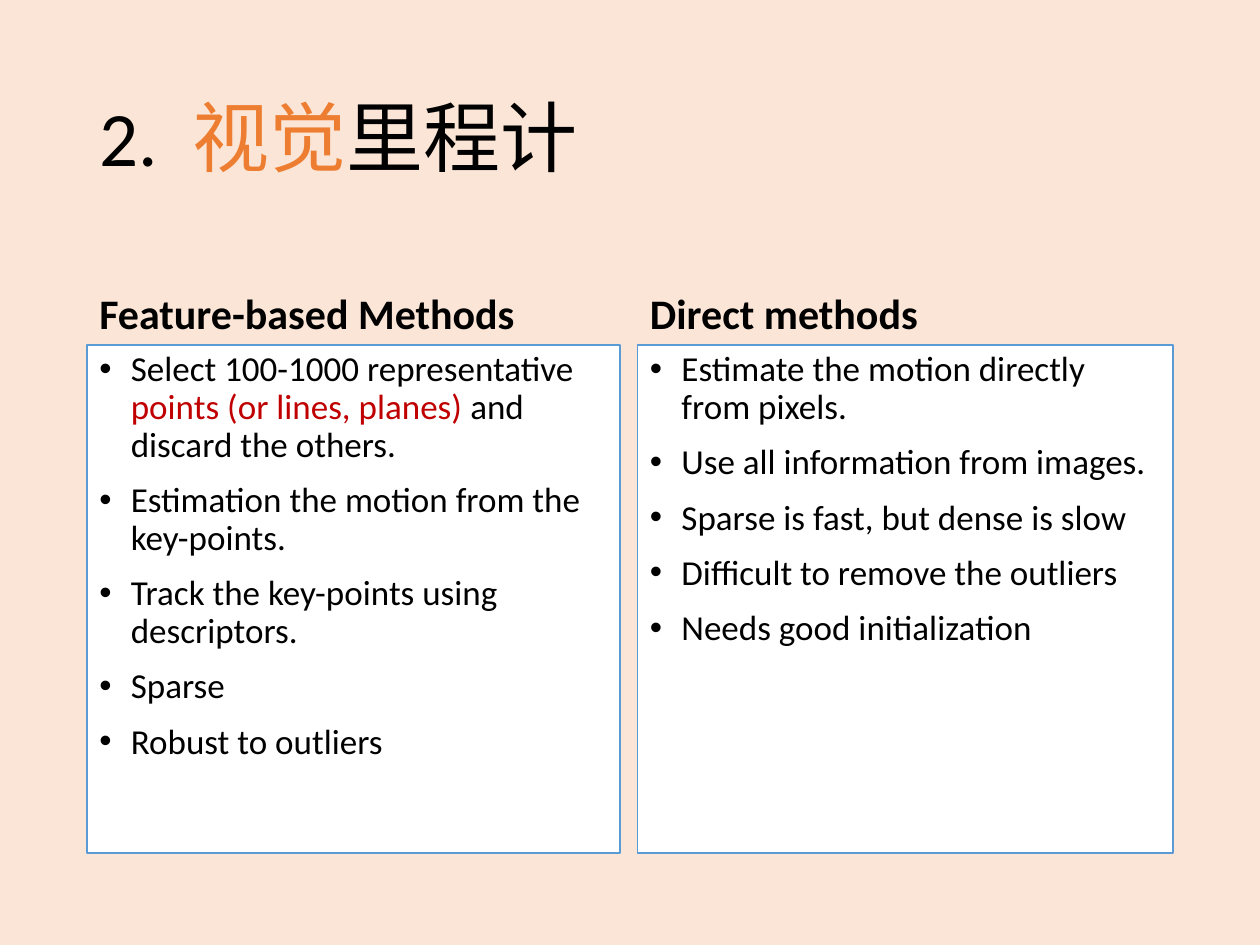
from dataclasses import dataclass

from lxml import etree
from pptx import Presentation
from pptx import util as u
from pptx.dml.color import RGBColor
from pptx.enum import shapes, text
from pptx.oxml import ns

SCALE = 9144  # EMU per px, 100 px to the inch


def px(n):
    return u.Emu(n * SCALE)


@dataclass(frozen=True)
class Theme:
    font: str = "Calibri"
    back: str = "FBE5D6"
    ink: str = "000000"
    hot: str = "ED7D31"
    red: str = "C00000"
    fill: str = "FFFFFF"
    edge: str = "5B9BD5"
    title: int = 44
    head: int = 24
    body: int = 20
    track: int = 990  # widens the space after the title number, 1/100 pt


class Deck:
    def __init__(self, theme):
        self.theme = theme
        self.prs = Presentation()
        self.prs.slide_width, self.prs.slide_height = px(1000), px(750)
        self.slide = self.prs.slides.add_slide(self.prs.slide_layouts[6])
        self.paint(self.slide.background.fill, theme.back)

    def paint(self, fill, tone):
        fill.solid()
        fill.fore_color.rgb = RGBColor.from_string(tone)

    def typeset(self, shape, paras, size, anchor, bold=False, dots=False):
        """Each paragraph is a list of (words, colour, tracking) runs."""
        frame = shape.text_frame
        frame.word_wrap = True
        frame.vertical_anchor = anchor
        for i, runs in enumerate(paras):
            para = frame.paragraphs[0] if i == 0 else frame.add_paragraph()
            if dots:
                self.dot(para)
            form = {"alignment": text.PP_ALIGN.LEFT, "line_spacing": 0.9,
                    "space_before": u.Pt(10 if i else 0)}
            for key, val in form.items():
                setattr(para, key, val)
            for words, tone, track in runs:
                run = para.add_run()
                run.text = words
                face = {"name": self.theme.font, "size": u.Pt(size), "bold": bold}
                for key, val in face.items():
                    setattr(run.font, key, val)
                run.font.color.rgb = RGBColor.from_string(tone)
                if track:
                    run._r.get_or_add_rPr().set("spc", str(track))

    def dot(self, para):
        """Give the paragraph a hanging round bullet."""
        props = para._p.get_or_add_pPr()
        props.set("marL", str(px(25)))
        props.set("indent", str(px(-25)))
        etree.SubElement(props, ns.qn("a:buFont")).set("typeface", "Arial")
        etree.SubElement(props, ns.qn("a:buChar")).set("char", "•")

    def label(self, area, runs, size, anchor, bold=False):
        box = self.slide.shapes.add_textbox(*map(px, area))
        self.typeset(box, [runs], size, anchor, bold)

    def panel(self, area, paras):
        box = self.slide.shapes.add_shape(shapes.MSO_SHAPE.RECTANGLE, *map(px, area))
        box.shadow.inherit = False
        self.paint(box.fill, self.theme.fill)
        self.paint(box.line.fill, self.theme.edge)
        box.line.width = u.Pt(1)
        self.typeset(box, paras, self.theme.body, text.MSO_ANCHOR.TOP, dots=True)

    def column(self, left, width, head, items):
        """A heading that sits on a bulleted panel."""
        theme = self.theme
        self.label((left, 184, width, 90), [(head, theme.ink, 0)],
                   theme.head, text.MSO_ANCHOR.BOTTOM, bold=True)
        self.panel((left, 274, width, 403), items)


def main():
    theme = Theme()
    deck = Deck(theme)

    def plain(*lines):
        return [[(line, theme.ink, 0)] for line in lines]

    deck.label((69, 40, 862, 145),
               [("2.", theme.ink, 0), (" ", theme.ink, theme.track),
                ("视觉", theme.hot, 0), ("里程计", theme.ink, 0)],
               theme.title, text.MSO_ANCHOR.MIDDLE)
    select = [("Select 100-1000 representative ", theme.ink, 0),
              ("points (or lines, planes)", theme.red, 0),
              (" and discard the others.", theme.ink, 0)]
    deck.column(69, 423, "Feature-based Methods", [select] + plain(
        "Estimation the motion from the key-points.",
        "Track the key-points using descriptors.",
        "Sparse",
        "Robust to outliers"))
    deck.column(506, 425, "Direct methods", plain(
        "Estimate the motion directly from pixels.",
        "Use all information from images.",
        "Sparse is fast, but dense is slow",
        "Difficult to remove the outliers",
        "Needs good initialization"))
    deck.prs.save("out.pptx")


if __name__ == "__main__":
    main()
